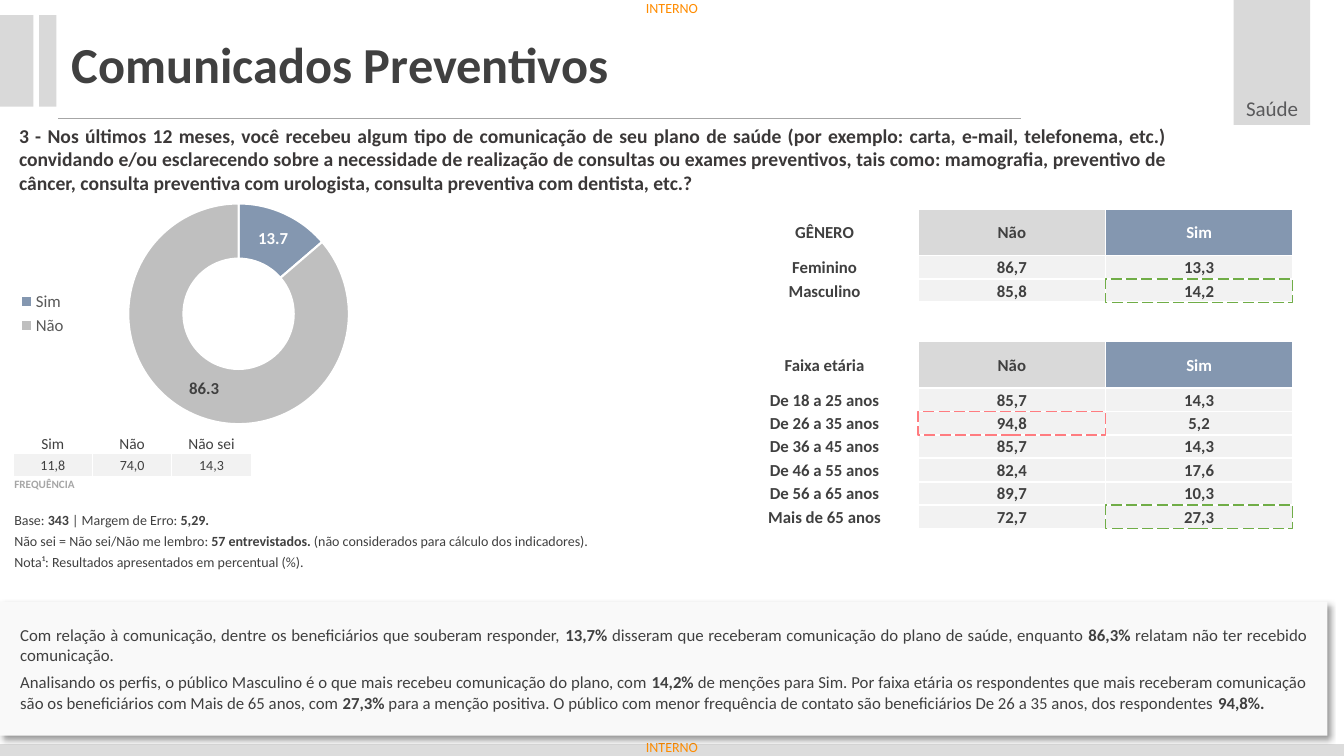
from dataclasses import dataclass

from lxml import etree
from pptx import Presentation
from pptx.chart.data import CategoryChartData
from pptx.dml.color import RGBColor
from pptx.enum import chart, dml, shapes, text
from pptx.oxml import ns, parse_xml
from pptx.util import Cm, Pt


@dataclass(frozen=True)
class Theme:
    font: str = "Calibri"
    ink: RGBColor = RGBColor(0x40, 0x40, 0x40)
    question_ink: RGBColor = RGBColor(0x3B, 0x38, 0x38)
    tag_ink: RGBColor = RGBColor(0x5A, 0x5A, 0x5C)
    legend_ink: RGBColor = RGBColor(0x59, 0x59, 0x59)
    white: RGBColor = RGBColor(0xFF, 0xFF, 0xFF)
    orange: RGBColor = RGBColor(0xFF, 0x8C, 0x00)
    footer: RGBColor = RGBColor(0xDC, 0xDC, 0xDC)
    bar: RGBColor = RGBColor(0xD9, 0xD9, 0xD9)
    cell: RGBColor = RGBColor(0xF2, 0xF2, 0xF2)
    panel: RGBColor = RGBColor(0xF9, 0xF9, 0xF9)
    rule: RGBColor = RGBColor(0xA6, 0xA6, 0xA6)
    no: RGBColor = RGBColor(0xBF, 0xBF, 0xBF)
    yes: RGBColor = RGBColor(0x84, 0x97, 0xB0)
    low: RGBColor = RGBColor(0xFF, 0x7C, 0x80)
    high: RGBColor = RGBColor(0x70, 0xAD, 0x47)
    title: int = 36
    tag: int = 15
    question: int = 14
    body: int = 12
    header: int = 11
    small: int = 10
    caption: int = 8


T = Theme()
A = ns.nsdecls("a")
LEFT, CENTER, JUSTIFY = text.PP_ALIGN.LEFT, text.PP_ALIGN.CENTER, text.PP_ALIGN.JUSTIFY
TOP, MIDDLE, BOTTOM = text.MSO_ANCHOR.TOP, text.MSO_ANCHOR.MIDDLE, text.MSO_ANCHOR.BOTTOM


def write(p, content, size, color=T.ink, bold=False, align=LEFT):
    """Fill a paragraph; parts between asterisks become bold."""
    p.alignment = align
    p.font.name, p.font.size, p.font.color.rgb = T.font, Pt(size), color
    parts = content.split("*")
    if len(parts) == 1:
        p.font.bold = bold
    for i, part in enumerate(parts):
        if part:
            r = p.add_run()
            r.text = part
            if len(parts) > 1:
                r.font.bold = i % 2 == 1


def add_grid(left, top, col_width, heights, cols, border):
    """Add an unstyled table with tight cells and white borders in points."""
    frame = s.shapes.add_table(len(heights), cols, Cm(left), Cm(top),
                               Cm(col_width * cols), Cm(sum(heights)))
    table = frame.table
    table.first_row = table.horz_banding = False
    for column in table.columns:
        column.width = Cm(col_width)
    for row, height in zip(table.rows, heights):
        row.height = Cm(height)
    for cell in table.iter_cells():
        cell.margin_left = cell.margin_right = cell.margin_top = Cm(0.03)
        cell.margin_bottom = 0
        tcPr = cell._tc.get_or_add_tcPr()
        for side in ("lnL", "lnR", "lnT", "lnB"):
            tcPr.append(parse_xml(
                f'<a:{side} {A} w="{Pt(border)}"><a:solidFill>'
                f'<a:srgbClr val="{T.white}"/></a:solidFill></a:{side}>'))
        cell.fill.background()
    return table


prs = Presentation()
prs.slide_width, prs.slide_height = Cm(33.87), Cm(19.05)
s = prs.slides.add_slide(prs.slide_layouts[5])

# Frame of the page
bars = [(0, 18.75, 33.87, 0.3, T.footer), (0, 0.38, 0.84, 2.31, T.bar),
        (0.99, 0.38, 0.43, 2.31, T.bar), (31.09, 0, 1.93, 3.15, T.bar)]
for *place, color in bars:
    sp = s.shapes.add_shape(shapes.MSO_SHAPE.RECTANGLE, *map(Cm, place))
    sp.shadow.inherit = False
    sp.fill.solid()
    sp.fill.fore_color.rgb = color
    sp.line.fill.background()

rule = s.shapes.add_connector(shapes.MSO_CONNECTOR.STRAIGHT,
                              Cm(1.47), Cm(2.97), Cm(25.73), Cm(2.97))
rule.line.color.rgb, rule.line.width = T.rule, Pt(0.5)
etree.SubElement(rule._element.spPr, ns.qn("a:effectLst"))

for top in (0, 18.62):
    tf = s.shapes.add_textbox(Cm(16.28), Cm(top), Cm(1.4), Cm(0.43)).text_frame
    tf.margin_left = tf.margin_right = tf.margin_top = tf.margin_bottom = 0
    tf.word_wrap = False
    write(tf.paragraphs[0], "INTERNO", T.small, T.orange)

# Headings
title = s.shapes.title
title.left, title.top, title.width, title.height = map(Cm, (1.55, 0.69, 14.76, 1.8))
title.text_frame.auto_size = text.MSO_AUTO_SIZE.NONE
title.text_frame.vertical_anchor = MIDDLE
write(title.text_frame.paragraphs[0], "Comunicados Preventivos", T.title, bold=True)

tf = s.shapes.add_textbox(Cm(30.84), Cm(2.29), Cm(2.44), Cm(0.89)).text_frame
tf.word_wrap = True
write(tf.paragraphs[0], "Saúde", T.tag, T.tag_ink, align=CENTER)

tf = s.shapes.add_textbox(Cm(0.2), Cm(2.97), Cm(29.49), Cm(2.08)).text_frame
tf.word_wrap = True
tf.margin_left = tf.margin_right = Cm(0.28)
tf.margin_top = tf.margin_bottom = Cm(0.15)
write(tf.paragraphs[0],
      "3 - Nos últimos 12 meses, você recebeu algum tipo de comunicação de seu plano de saúde "
      "(por exemplo: carta, e-mail, telefonema, etc.) convidando e/ou esclarecendo sobre a "
      "necessidade de realização de consultas ou exames preventivos, tais como: mamografia, "
      "preventivo de câncer, consulta preventiva com urologista, consulta preventiva com "
      "dentista, etc.?", T.question, T.question_ink, True, JUSTIFY)

# Profile table
header, line, gap = 1.18, 0.59, 0.98
profiles = [
    ("GÊNERO", "Não", "Sim"), ("Feminino", "86,7", "13,3"), ("Masculino", "85,8", "14,2"),
    (),
    ("Faixa etária", "Não", "Sim"), ("De 18 a 25 anos", "85,7", "14,3"),
    ("De 26 a 35 anos", "94,8", "5,2"), ("De 36 a 45 anos", "85,7", "14,3"),
    ("De 46 a 55 anos", "82,4", "17,6"), ("De 56 a 65 anos", "89,7", "10,3"),
    ("Mais de 65 anos", "72,7", "27,3")]
heights = [gap if not row else header if row[1] == "Não" else line for row in profiles]
left, top, width = 18.42, 5.26, 4.72
table = add_grid(left, top, width, heights, 3, 1.5)
table.cell(3, 0).merge(table.cell(3, 2))
for i, row in enumerate(profiles):
    fills = (None, T.bar, T.yes) if heights[i] == header else (None, T.cell, T.cell)
    for j, value in enumerate(row):
        cell = table.cell(i, j)
        cell.vertical_anchor = MIDDLE
        if fills[j]:
            cell.fill.solid()
            cell.fill.fore_color.rgb = fills[j]
        write(cell.text_frame.paragraphs[0], value, T.body,
              T.white if fills[j] == T.yes else T.ink, True, CENTER)

for i, j, color in [(6, 1, T.low), (2, 2, T.high), (10, 2, T.high)]:
    mark = s.shapes.add_shape(shapes.MSO_SHAPE.RECTANGLE, Cm(left + j * width),
                              Cm(top + sum(heights[:i])), Cm(width), Cm(line))
    mark.shadow.inherit = False
    mark.fill.background()
    mark.line.color.rgb, mark.line.width = color, Pt(1)
    mark.line.dash_style = dml.MSO_LINE.LONG_DASH

# Frequency table and notes
table = add_grid(0.33, 10.92, 2, [0.5, 0.6, 0.6], 3, 1)
for j, (answer, share) in enumerate([("Sim", "11,8"), ("Não", "74,0"), ("Não sei", "14,3")]):
    head, cell = table.cell(0, j), table.cell(1, j)
    head.vertical_anchor, cell.vertical_anchor = BOTTOM, MIDDLE
    cell.fill.solid()
    cell.fill.fore_color.rgb = T.cell
    write(head.text_frame.paragraphs[0], answer, T.header, align=CENTER)
    write(cell.text_frame.paragraphs[0], share, T.small, align=CENTER)
table.cell(2, 0).merge(table.cell(2, 2))
write(table.cell(2, 0).text_frame.paragraphs[0], "FREQUÊNCIA", T.caption, T.rule, True)

notes = ["Base: *343* | Margem de Erro: *5,29.*",
         "Não sei = Não sei/Não me lembro: *57 entrevistados.* "
         "(não considerados para cálculo dos indicadores).",
         "Nota¹: Resultados apresentados em percentual (%)."]
table = add_grid(0.33, 12.88, 18, [0.53] * 3, 1, 1)
for i, note in enumerate(notes):
    write(table.cell(i, 0).text_frame.paragraphs[0], note, T.small)

# Doughnut chart
data = CategoryChartData(number_format="0.0")
data.categories = ["Sim", "Não"]
data.add_series("Series 1", (13.7, 86.3))
ch = s.shapes.add_chart(chart.XL_CHART_TYPE.DOUGHNUT, Cm(0.2), Cm(4.75),
                        Cm(10.11), Cm(6.32), data).chart
ch.has_title = False
ch.font.name, ch.font.size = T.font, Pt(T.small)
ch.has_legend = True
ch.legend.position = chart.XL_LEGEND_POSITION.LEFT
ch.legend.include_in_layout = False
ch.legend.font.name, ch.legend.font.size = T.font, Pt(T.body)
ch.legend.font.color.rgb = T.legend_ink
plot = ch.plots[0]
plot.vary_by_categories = True
labels = plot.series[0].data_labels
labels.show_value, labels.show_percentage = True, False
labels.number_format, labels.number_format_is_linked = "0.0", False
for i, (color, ink) in enumerate([(T.yes, T.white), (T.no, T.ink)]):
    point = plot.series[0].points[i]
    point.format.fill.solid()
    point.format.fill.fore_color.rgb = color
    point.format.line.color.rgb, point.format.line.width = T.white, Pt(1.5)
    for font in (labels.font, point.data_label.font):
        font.name, font.size, font.bold = T.font, Pt(T.body), True
        font.color.rgb = T.white if font is labels.font else ink
plot_area = ch._chartSpace.chart.plotArea
for old in plot_area.findall(ns.qn("c:layout")):
    plot_area.remove(old)
sizes = "".join(f'<c:{k} val="{v}"/>' for k, v in
                [("layoutTarget", "inner"), ("xMode", "edge"), ("yMode", "edge"),
                 ("x", 0.3), ("y", 0.06), ("w", 0.55), ("h", 0.88)])
plot_area.insert(0, parse_xml(f'<c:layout {ns.nsdecls("c")}><c:manualLayout>{sizes}'
                              '</c:manualLayout></c:layout>'))

# Commentary
panel = s.shapes.add_shape(shapes.MSO_SHAPE.RECTANGLE, Cm(0), Cm(15.16), Cm(33.45), Cm(3.38))
panel.fill.solid()
panel.fill.fore_color.rgb = T.panel
panel.line.fill.background()
panel._element.spPr.append(parse_xml(
    f'<a:effectLst {A}><a:outerShdw blurRad="{Pt(4)}" dist="{Pt(3)}" dir="2700000" algn="tl">'
    '<a:srgbClr val="000000"><a:alpha val="40000"/></a:srgbClr></a:outerShdw></a:effectLst>'))
tf = panel.text_frame
tf.word_wrap, tf.vertical_anchor = True, MIDDLE
tf.margin_left = tf.margin_right = Cm(0.51)
tf.margin_top = tf.margin_bottom = Cm(0.1)
write(tf.paragraphs[0],
      "Com relação à comunicação, dentre os beneficiários que souberam responder, *13,7%* "
      "disseram que receberam comunicação do plano de saúde, enquanto *86,3%* relatam não ter "
      "recebido comunicação.", T.body, align=JUSTIFY)
p = tf.add_paragraph()
p.space_before = Pt(5)
write(p, "Analisando os perfis, o público Masculino é o que mais recebeu comunicação do plano, com "
      "*14,2% *de menções para Sim. Por faixa etária os respondentes que mais receberam "
      "comunicação são os beneficiários com Mais de 65 anos, com *27,3% *para a menção positiva. "
      "O público com menor frequência de contato são beneficiários De 26 a 35 anos, dos "
      "respondentes *94,8%.*", T.body, align=JUSTIFY)

prs.save("out.pptx")
